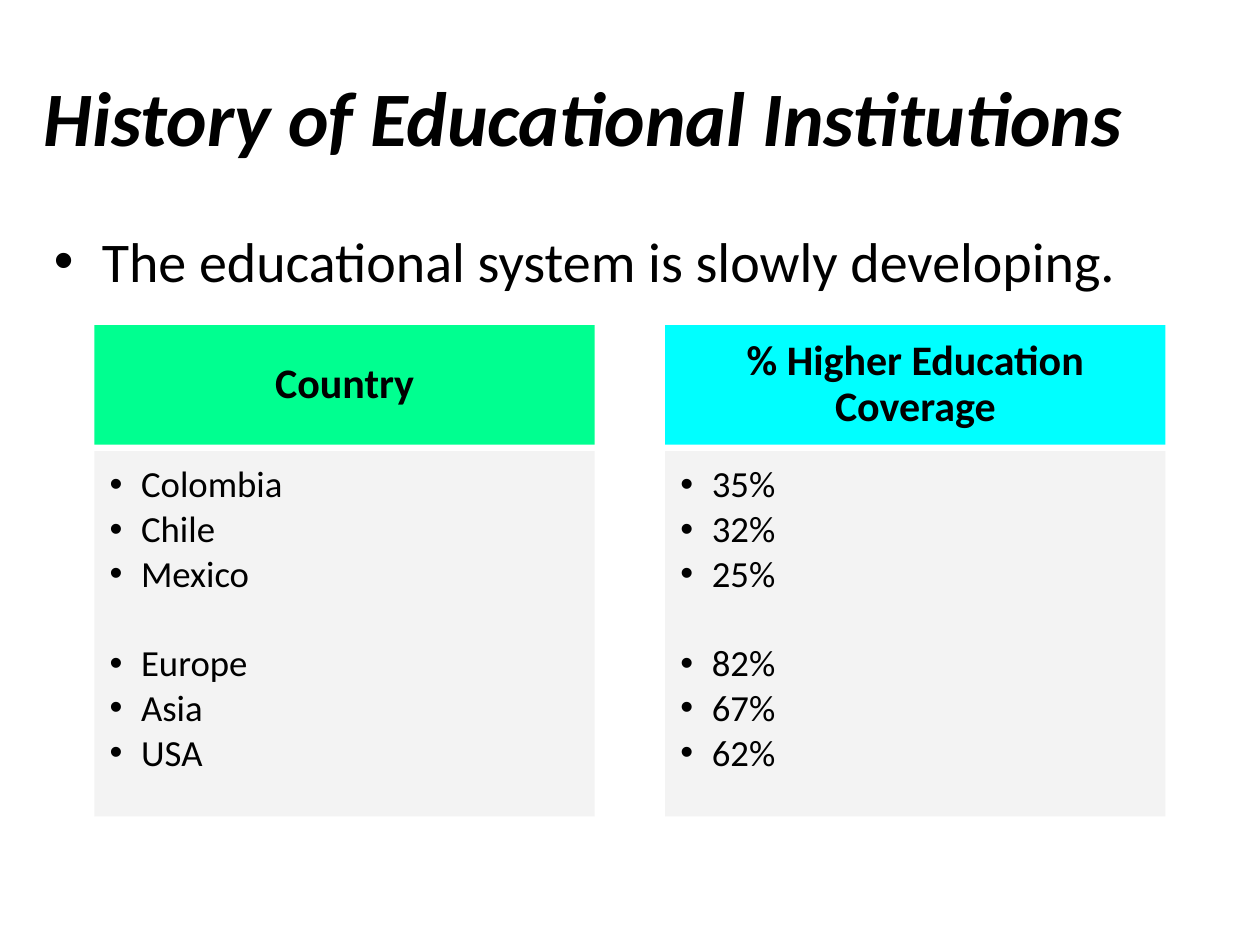
from lxml import etree
from pptx import Presentation
from pptx.dml.color import RGBColor
from pptx.enum.shapes import MSO_SHAPE
from pptx.enum.text import MSO_ANCHOR, PP_ALIGN
from pptx.oxml.ns import qn
from pptx.util import Inches, Pt

RECTANGLE = MSO_SHAPE.RECTANGLE
TOP, MIDDLE = MSO_ANCHOR.TOP, MSO_ANCHOR.MIDDLE
LEFT, CENTER = PP_ALIGN.LEFT, PP_ALIGN.CENTER

BLACK, PANEL_GREY = "000000", "F2F2F2"
COLUMN_LEFT, COLUMN_STEP, COLUMN_WIDTH = 0.75, 4.53, 3.97
HEADER_TOP, HEADER_HEIGHT = 2.58, 0.95
PANEL_TOP, PANEL_HEIGHT = 3.58, 2.9
LINE_SPACING, ITEM_GAP, GROUP_GAP = 0.9, 2.8, 25.8

COLUMNS = [
    ("Country", "00FF90",
     [["Colombia", "Chile", "Mexico"], ["Europe", "Asia", "USA"]]),
    ("% Higher Education Coverage", "00FFFF",
     [["35%", "32%", "25%"], ["82%", "67%", "62%"]]),
]


def paint(color_format, hex_color):
    color_format.rgb = RGBColor.from_string(hex_color)


def set_frame(frame, anchor, insets):
    frame.word_wrap = True
    frame.vertical_anchor = anchor
    (frame.margin_left, frame.margin_top,
     frame.margin_right, frame.margin_bottom) = map(Inches, insets)


def style(paragraph, size, bold=False, italic=False, align=LEFT):
    paragraph.alignment = align
    for run in paragraph.runs:
        run.font.name = "Calibri"
        run.font.size = Pt(size)
        run.font.bold = bold
        run.font.italic = italic
        paint(run.font.color, BLACK)


def add_bullet(paragraph, indent):
    properties = paragraph._p.get_or_add_pPr()
    properties.set("marL", str(Inches(indent)))
    properties.set("indent", str(-Inches(indent)))
    typeface = etree.SubElement(properties, qn("a:buFont"))
    typeface.set("typeface", "Arial")
    etree.SubElement(properties, qn("a:buChar")).set("char", "•")


def add_text(slide, box, text):
    frame = slide.shapes.add_textbox(*map(Inches, box)).text_frame
    set_frame(frame, TOP, (0.1, 0.05, 0.1, 0.05))
    frame.text = text
    return frame.paragraphs[0]


def add_block(slide, box, hex_color, opacity=100):
    block = slide.shapes.add_shape(RECTANGLE, *map(Inches, box))
    block.shadow.inherit = False
    block.fill.solid()
    paint(block.fill.fore_color, hex_color)
    block.line.fill.background()
    if opacity < 100:
        color = block._element.spPr.find(".//" + qn("a:srgbClr"))
        etree.SubElement(color, qn("a:alpha")).set("val", str(opacity * 1000))
    return block.text_frame


def add_header(slide, left, heading, hex_color):
    frame = add_block(
        slide, (left, HEADER_TOP, COLUMN_WIDTH, HEADER_HEIGHT), hex_color)
    set_frame(frame, MIDDLE, (0.19, 0.11, 0.19, 0.11))
    frame.text = heading
    frame.paragraphs[0].line_spacing = LINE_SPACING
    style(frame.paragraphs[0], 24, bold=True, align=CENTER)


def add_panel(slide, left, groups):
    frame = add_block(
        slide, (left, PANEL_TOP, COLUMN_WIDTH, PANEL_HEIGHT), PANEL_GREY, 90)
    set_frame(frame, TOP, (0.12, 0.12, 0.16, 0.18))
    frame.text = "\n".join(item for group in groups for item in group)
    for item in frame.paragraphs:
        add_bullet(item, 0.25)
        item.line_spacing = LINE_SPACING
        item.space_after = Pt(ITEM_GAP)
        style(item, 21)
    frame.paragraphs[len(groups[0])].space_before = Pt(GROUP_GAP)


def main():
    deck = Presentation()
    deck.slide_width, deck.slide_height = Inches(10), Inches(7.5)
    slide = deck.slides.add_slide(deck.slide_layouts[6])

    title = add_text(slide, (0.25, 0.5, 9.25, 1.25),
                     "History of Educational Institutions")
    style(title, 44, bold=True, italic=True)
    statement = add_text(slide, (0.33, 1.75, 9.17, 0.75),
                         "The educational system is slowly developing.")
    add_bullet(statement, 0.38)
    style(statement, 32)

    for index, (heading, hex_color, groups) in enumerate(COLUMNS):
        left = COLUMN_LEFT + index * COLUMN_STEP
        add_header(slide, left, heading, hex_color)
        add_panel(slide, left, groups)

    deck.save("out.pptx")


if __name__ == "__main__":
    main()
